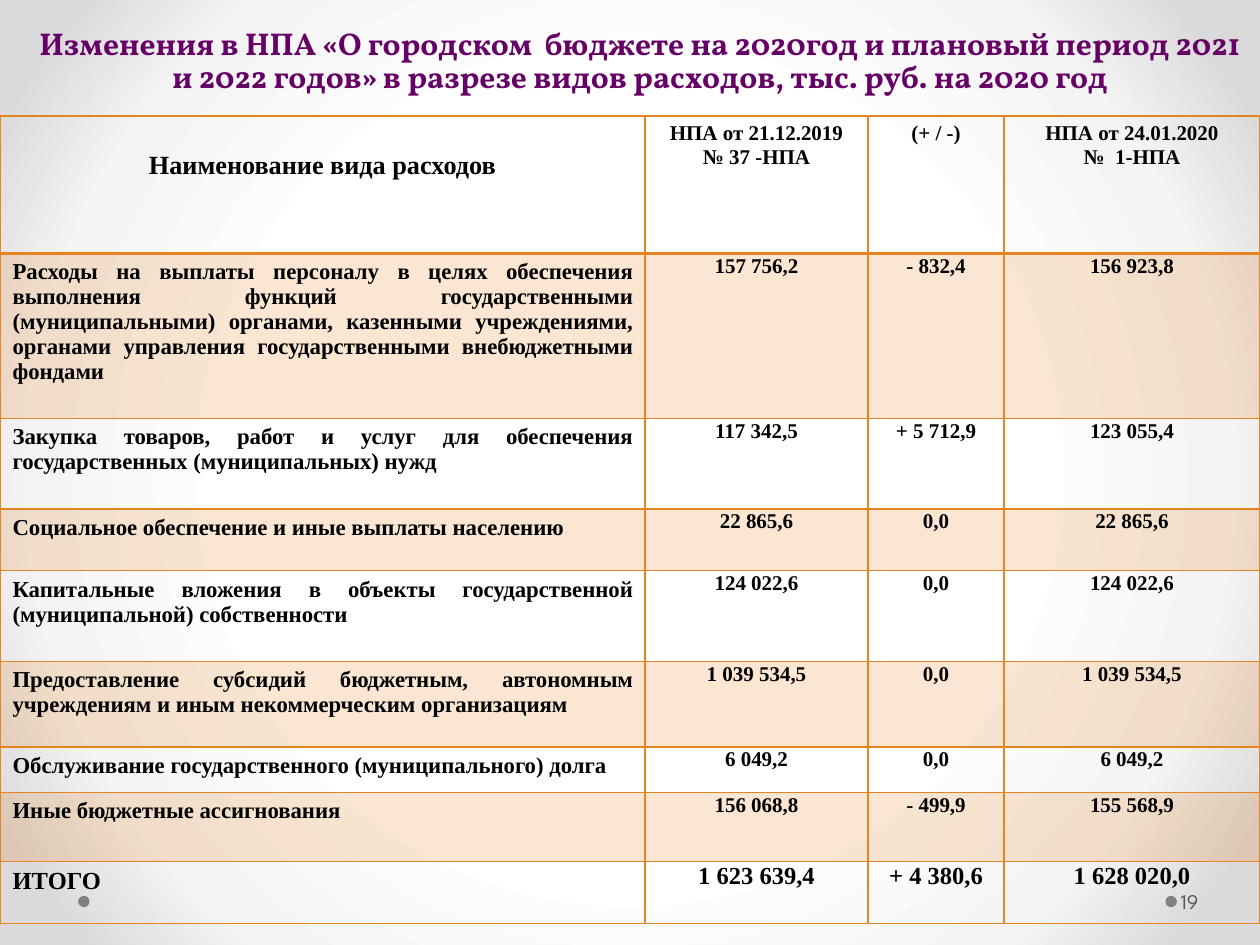
"""Build the slide comparing city budget spending by type for 2020."""
from lxml.etree import SubElement
from pptx import Presentation
from pptx.dml.color import RGBColor
from pptx.enum.shapes import MSO_SHAPE as Shape
from pptx.enum.text import MSO_ANCHOR as Anchor, PP_ALIGN as Align
from pptx.oxml import parse_xml
from pptx.oxml.ns import nsdecls, qn
from pptx.util import Inches, Pt

TITLE = ("Изменения в НПА «О городском  бюджете на 2020год и плановый период 2021 "
         "и 2022 годов» в разрезе видов расходов, тыс. руб. на 2020 год")
PAGE_NUMBER = "19"
ROWS = [
    ("Наименование вида расходов", "НПА от 21.12.2019\n№ 37 -НПА", "(+ / -)",
     "НПА от 24.01.2020\n№  1-НПА"),
    ("Расходы на выплаты персоналу в целях обеспечения выполнения функций "
     "государственными (муниципальными) органами, казенными учреждениями, "
     "органами управления государственными внебюджетными фондами",
     "157 756,2", "- 832,4", "156 923,8"),
    ("Закупка товаров, работ и услуг для обеспечения государственных "
     "(муниципальных) нужд", "117 342,5", "+ 5 712,9", "123 055,4"),
    ("Социальное обеспечение и иные выплаты населению", "22 865,6", "0,0", "22 865,6"),
    ("Капитальные вложения в объекты государственной (муниципальной) собственности",
     "124 022,6", "0,0", "124 022,6"),
    ("Предоставление субсидий бюджетным, автономным учреждениям и иным "
     "некоммерческим организациям", "1 039 534,5", "0,0", "1 039 534,5"),
    ("Обслуживание государственного (муниципального) долга", "6 049,2", "0,0", "6 049,2"),
    ("Иные бюджетные ассигнования", "156 068,8", "- 499,9", "155 568,9"),
    ("ИТОГО", "1 623 639,4", "+ 4 380,6", "1 628 020,0"),
]
COLUMN_WIDTHS = [5.12, 1.77, 1.08, 2.03]
ROW_HEIGHTS = [1.09, 1.31, 0.72, 0.49, 0.72, 0.68, 0.36, 0.55, 0.49]
DOT_LEFTS = [9.25, 0.62]
BACKGROUND_STOPS = [(50, "FFFFFF"), (76, "F4F4F4"), (92, "DADADA")]
ORANGE = "E68422"
BAND_OPACITY = 20
NO_STYLE = "{2D5ABB26-0587-4C30-8999-92F81FD0307C}"
TITLE_FONT = {"name": "Vollkorn", "size": Pt(18), "bold": True}
NUMBER_FONT = {"name": "League Spartan", "size": Pt(12)}
CELL_FONT = {"name": "Times New Roman", "bold": True}


def rgb(color):
    return RGBColor.from_string(color)


def set_values(target, values):
    for name, value in values.items():
        setattr(target, name, value)


def write(frame, text, align, font, color):
    for index, line in enumerate(text.split("\n")):
        paragraph = frame.add_paragraph() if index else frame.paragraphs[0]
        paragraph.alignment = align
        run = paragraph.add_run()
        run.text = line
        set_values(run.font, font)
        run.font.color.rgb = rgb(color)


def add_text(slide, box, text, align, font, color, margin_left):
    frame = slide.shapes.add_textbox(*map(Inches, box)).text_frame
    set_values(frame, {"word_wrap": True, "vertical_anchor": Anchor.MIDDLE,
                       "margin_left": Inches(margin_left)})
    write(frame, text, align, font, color)
    return frame


def set_background(slide):
    stops = "".join(f'<a:gs pos="{position * 1000}"><a:srgbClr val="{color}"/></a:gs>'
                    for position, color in BACKGROUND_STOPS)
    slide.element.cSld.insert(0, parse_xml(
        f'<p:bg {nsdecls("p", "a")}><p:bgPr><a:gradFill rotWithShape="1">'
        f'<a:gsLst>{stops}</a:gsLst><a:path path="circle">'
        '<a:fillToRect l="50000" t="50000" r="50000" b="50000"/></a:path>'
        '</a:gradFill><a:effectLst/></p:bgPr></p:bg>'))


def add_borders(cell, widths):
    properties = cell._tc.get_or_add_tcPr()
    for side, width in widths.items():
        properties.append(parse_xml(
            f'<a:ln{side} {nsdecls("a")} w="{Pt(width)}"><a:solidFill>'
            f'<a:srgbClr val="{ORANGE}"/></a:solidFill></a:ln{side}>'))


def fill_cell(cell, banded):
    if not banded:
        cell.fill.background()
        return
    cell.fill.solid()
    cell.fill.fore_color.rgb = rgb(ORANGE)
    color = cell._tc.tcPr.find(qn("a:solidFill")).find(qn("a:srgbClr"))
    SubElement(color, qn("a:alpha"), val=str(BAND_OPACITY * 1000))


def format_cell(cell, text, row, column):
    header, total = row == 0, row == len(ROWS) - 1
    label = column == 0
    if header:
        size = 15 if label else 12
    elif total:
        size = 14
    else:
        size = 13 if label else 12
    if header or not label:
        align = Align.CENTER
    else:
        align = Align.LEFT if total else Align.JUSTIFY
    if header and label:
        cell.margin_top = Inches(0.28)
    elif not header and not label:
        set_values(cell, {"margin_left": Inches(0.01), "margin_right": Inches(0.01),
                          "margin_top": Inches(0.01), "margin_bottom": 0})
    write(cell.text_frame, text, align, {**CELL_FONT, "size": Pt(size)}, "000000")
    add_borders(cell, {"L": 1, "R": 1, "T": 2 if row == 1 else 1, "B": 2 if header else 1})
    fill_cell(cell, row % 2 == 1)


def add_budget_table(slide):
    box = map(Inches, (0, 0.92, sum(COLUMN_WIDTHS), sum(ROW_HEIGHTS)))
    table = slide.shapes.add_table(len(ROWS), len(COLUMN_WIDTHS), *box).table
    set_values(table, {"first_row": False, "horz_banding": False})
    table._tbl.tblPr.find(qn("a:tableStyleId")).text = NO_STYLE
    for column, width in zip(table.columns, COLUMN_WIDTHS):
        column.width = Inches(width)
    for row, height in zip(table.rows, ROW_HEIGHTS):
        row.height = Inches(height)
    for row, texts in enumerate(ROWS):
        for column, text in enumerate(texts):
            format_cell(table.cell(row, column), text, row, column)


def main():
    presentation = Presentation()
    set_values(presentation, {"slide_width": Inches(10), "slide_height": Inches(7.5)})
    slide = presentation.slides.add_slide(presentation.slide_layouts[6])
    set_background(slide)
    for left in DOT_LEFTS:
        dot = slide.shapes.add_shape(Shape.OVAL, *map(Inches, (left, 7.11, 0.09, 0.09)))
        dot.shadow.inherit = False
        dot.fill.solid()
        dot.fill.fore_color.rgb = rgb("808080")
        dot.line.fill.background()
    title = add_text(slide, (0.16, 0, 9.84, 0.99), TITLE, Align.CENTER,
                     TITLE_FONT, "660066", 0.1)
    title.paragraphs[0].line_spacing = 0.87
    add_text(slide, (9.34, 6.95, 0.61, 0.4), PAGE_NUMBER, Align.LEFT,
             NUMBER_FONT, "595959", 0.03)
    add_budget_table(slide)
    presentation.save("out.pptx")


if __name__ == "__main__":
    main()
